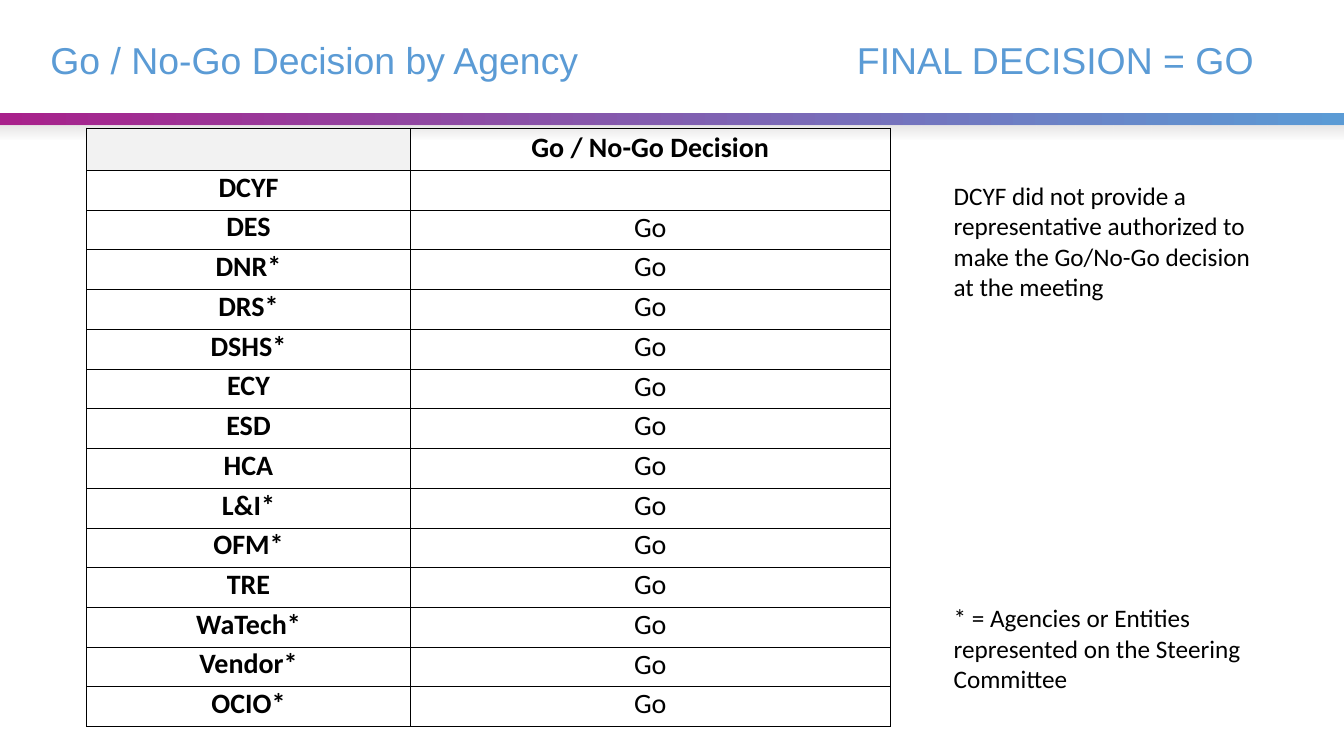
from lxml import etree
from pptx import Presentation, util as u
from pptx.dml.color import RGBColor
from pptx.enum import shapes, text
from pptx.oxml.ns import qn

# Content
TITLE = "Go / No-Go Decision by Agency\tFINAL DECISION = GO"
HEADER = ("", "Go / No-Go Decision")
UNDECIDED = "DCYF"
AGENCIES = [UNDECIDED, "DES", "DNR*", "DRS*", "DSHS*", "ECY", "ESD", "HCA",
            "L&I*", "OFM*", "TRE", "WaTech*", "Vendor*", "OCIO*"]
ROWS = [HEADER] + [(name, "" if name == UNDECIDED else "Go") for name in AGENCIES]
NOTES = [
    (1.74, 1.31, "DCYF did not provide a representative authorized to make "
                 "the Go/No-Go decision at the meeting"),
    (5.93, 1.01, "* = Agencies or Entities represented on the Steering Committee"),
]

# Look and layout, in inches
COLORS = {"title": "5B9BD5", "magenta": "A8218B", "shade": "E7E6E6",
          "corner": "F2F2F2", "ink": "000000"}
WIDTH, HEIGHT = 13.33, 7.5
BAND_TOP, BAND_HEIGHT = 1.12, 0.13
TABLE_LEFT, TABLE_TOP, TABLE_HEIGHT = 0.86, 1.27, 5.94
COLUMNS = (3.21, 4.76)
HEADER_HEIGHT = 0.42
NOTE_LEFT, NOTE_WIDTH = 9.36, 3.28
TITLE_TAB = 8


def rgb(name):
    return RGBColor.from_string(COLORS[name])


def style(para, face, size, color, bold=False):
    para.font.name, para.font.size, para.font.bold = face, u.Pt(size), bold
    para.font.color.rgb = rgb(color)


def add_band(page, top, start, end, angle):
    band = page.shapes.add_shape(shapes.MSO_SHAPE.RECTANGLE, 0, u.Inches(top),
                                 u.Inches(WIDTH), u.Inches(BAND_HEIGHT))
    band.shadow.inherit = False
    band.line.fill.background()
    band.fill.gradient()
    band.fill.gradient_angle = angle
    for stop, color, position in zip(band.fill.gradient_stops, (start, end), (0, 1)):
        stop.color.rgb = rgb(color)
        stop.position = position
    return band


def add_text(page, left, top, width, height, words):
    box = page.shapes.add_textbox(*map(u.Inches, (left, top, width, height)))
    box.text_frame.word_wrap = True
    box.text_frame.text = words
    return box.text_frame


def add_borders(cell):
    props = cell._tc.get_or_add_tcPr()
    for place, side in enumerate(("lnL", "lnR", "lnT", "lnB")):
        line = etree.Element(qn("a:" + side), w=str(u.Pt(0.5)))
        fill = etree.SubElement(line, qn("a:solidFill"))
        etree.SubElement(fill, qn("a:srgbClr"), val=COLORS["ink"])
        props.insert(place, line)


deck = Presentation()
deck.slide_width, deck.slide_height = u.Inches(WIDTH), u.Inches(HEIGHT)
page = deck.slides.add_slide(deck.slide_layouts[6])

# Colour band and the fading shade below it
add_band(page, BAND_TOP, "magenta", "title", 0)
shade = add_band(page, BAND_TOP + BAND_HEIGHT, "shade", "shade", 270)
last_color = list(shade._element.spPr.iter(qn("a:srgbClr")))[-1]
etree.SubElement(last_color, qn("a:alpha"), val="0")

# Title, with the final decision at a tab stop
frame = add_text(page, 0.5, 0.25, 12.33, 0.75, TITLE)
frame.margin_left = frame.margin_right = frame.margin_top = frame.margin_bottom = 0
frame.vertical_anchor = text.MSO_ANCHOR.MIDDLE
para = frame.paragraphs[0]
para.line_spacing = u.Pt(26.7)
tabs = etree.SubElement(para._p.get_or_add_pPr(), qn("a:tabLst"))
etree.SubElement(tabs, qn("a:tab"), pos=str(u.Inches(TITLE_TAB)), algn="l")
style(para, "Arial", 26.7, "title")

# Decision table
table = page.shapes.add_table(len(ROWS), len(COLUMNS), *map(u.Inches, (
    TABLE_LEFT, TABLE_TOP, sum(COLUMNS), TABLE_HEIGHT))).table
table.first_row = table.horz_banding = False
for column, width in zip(table.columns, COLUMNS):
    column.width = u.Inches(width)
body_height = (TABLE_HEIGHT - HEADER_HEIGHT) / len(AGENCIES)
for r, row in enumerate(ROWS):
    table.rows[r].height = u.Inches(body_height if r else HEADER_HEIGHT)
    for c, words in enumerate(row):
        cell = table.cell(r, c)
        cell.margin_left = cell.margin_right = cell.margin_top = 0
        cell.margin_bottom = u.Inches(0.05)
        cell.vertical_anchor = text.MSO_ANCHOR.BOTTOM if c else text.MSO_ANCHOR.MIDDLE
        cell.fill.background()
        add_borders(cell)
        cell.text = words
        para = cell.text_frame.paragraphs[0]
        para.alignment = text.PP_ALIGN.CENTER
        style(para, "Calibri", 20, "ink", bold=r == 0 or c == 0)
corner = table.cell(0, 0)
corner.fill.solid()
corner.fill.fore_color.rgb = rgb("corner")

# Side notes
for top, height, words in NOTES:
    frame = add_text(page, NOTE_LEFT, top, NOTE_WIDTH, height, words)
    style(frame.paragraphs[0], "Calibri", 18, "ink")

deck.save("out.pptx")
